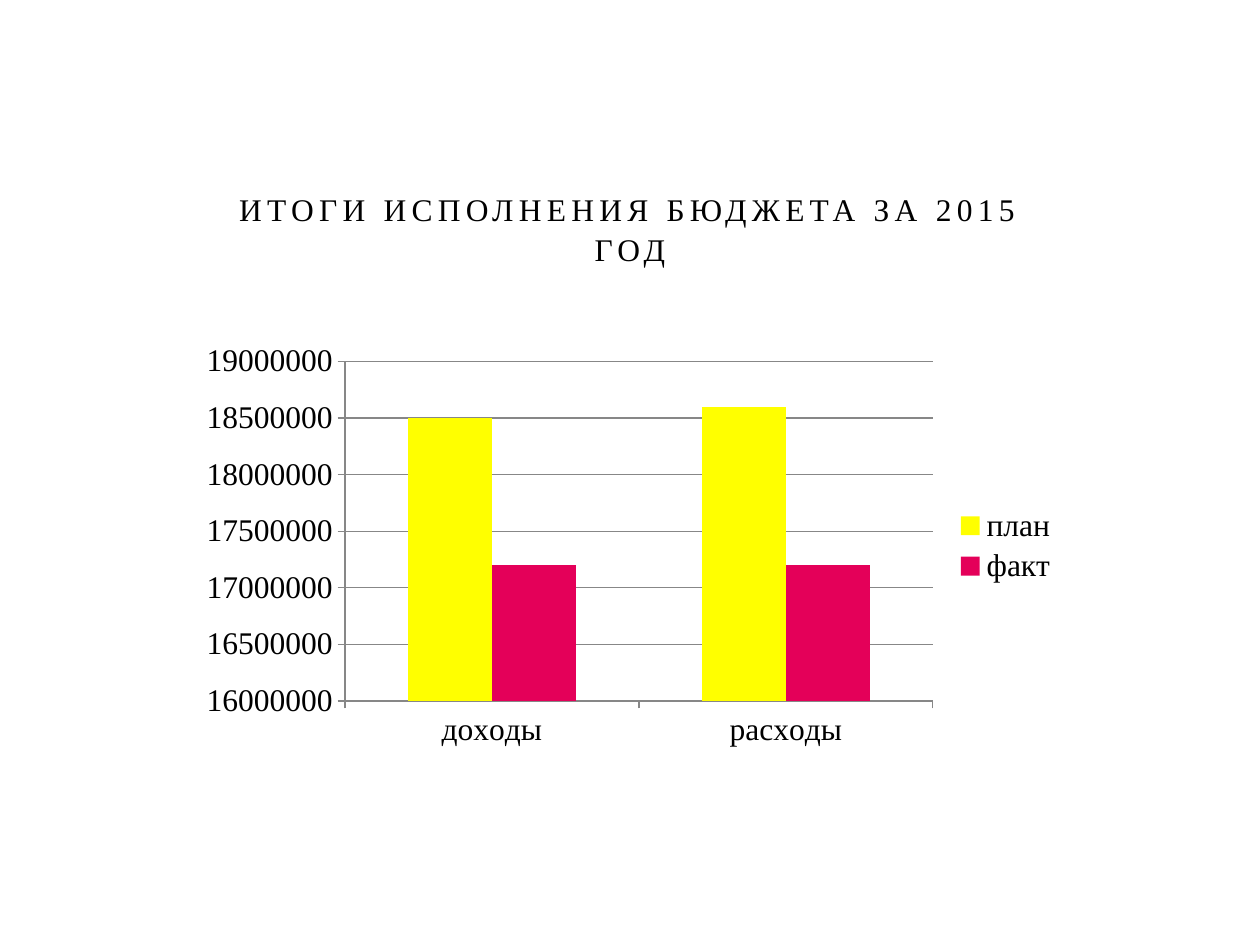
from pptx import Presentation
from pptx import util as u
from pptx.chart.data import CategoryChartData
from pptx.dml.color import RGBColor
from pptx.enum import chart as ch, text

PX = 914400 // 126
FONT = "Times New Roman"
COLORS = {"text": "000000", "line": "878787", "план": "FFFF00", "факт": "E40059"}


def px(*lengths):
    return [u.Emu(n * PX) for n in lengths]


def style_font(font):
    font.name = FONT
    font.size = u.Pt(18)
    font.bold = False
    font.color.rgb = RGBColor.from_string(COLORS["text"])


prs = Presentation()
prs.slide_width, prs.slide_height = px(1260, 945)
slide = prs.slides.add_slide(prs.slide_layouts[5])

# Title
title = slide.shapes.title
title.left, title.top, title.width, title.height = px(189, 179, 882, 95)
heading = title.text_frame
heading.word_wrap = True
heading.auto_size = text.MSO_AUTO_SIZE.NONE
heading.vertical_anchor = text.MSO_ANCHOR.BOTTOM
line = heading.paragraphs[0]
line.alignment = text.PP_ALIGN.CENTER
line.line_spacing = 1.05
run = line.add_run()
run.text = "ИТОГИ ИСПОЛНЕНИЯ БЮДЖЕТА ЗА 2015 ГОД"
style_font(run.font)
run.font._element.set("spc", "300")

# Budget chart
budget = CategoryChartData(number_format="General")
budget.categories = ["доходы", "расходы"]
budget.add_series("план", [18500000, 18600000])
budget.add_series("факт", [17200000, 17200000])
chart = slide.shapes.add_chart(
    ch.XL_CHART_TYPE.COLUMN_CLUSTERED, *px(189, 336, 882, 420), budget
).chart
style_font(chart.font)
chart.has_title = False

# Columns
plot = chart.plots[0]
plot.gap_width = 150
plot.overlap = 0
plot.vary_by_categories = False
for series in plot.series:
    series.format.fill.solid()
    series.format.fill.fore_color.rgb = RGBColor.from_string(COLORS[series.name])

# Axes and gridlines
amounts = chart.value_axis
amounts.minimum_scale = 16000000
amounts.maximum_scale = 19000000
amounts.major_unit = 500000
amounts.has_major_gridlines = True
for axis in (chart.category_axis, amounts):
    axis.major_tick_mark = ch.XL_TICK_MARK.OUTSIDE
    axis.minor_tick_mark = ch.XL_TICK_MARK.NONE
for part in (chart.category_axis, amounts, amounts.major_gridlines):
    part.format.line.width = u.Pt(0.75)
    part.format.line.color.rgb = RGBColor.from_string(COLORS["line"])

# Legend
chart.has_legend = True
chart.legend.position = ch.XL_LEGEND_POSITION.RIGHT
chart.legend.include_in_layout = False

prs.save("out.pptx")
